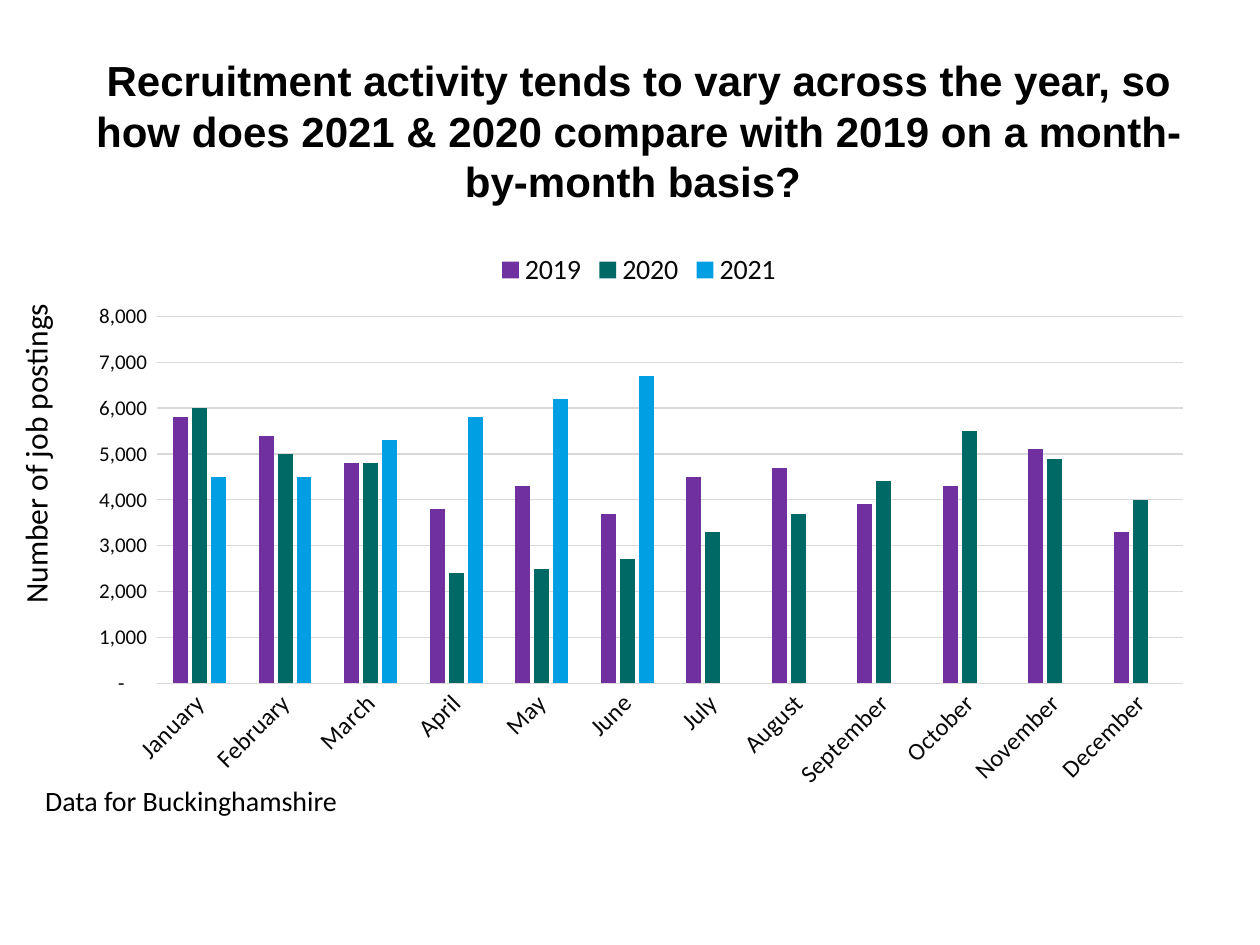
from pptx import Presentation
from pptx.chart.data import CategoryChartData
from pptx.dml.color import RGBColor
from pptx.enum.chart import XL_CHART_TYPE, XL_LEGEND_POSITION, XL_TICK_MARK
from pptx.enum.text import MSO_ANCHOR, MSO_AUTO_SIZE, PP_ALIGN
from pptx.util import Inches, Pt


def color(hex_string):
    return RGBColor.from_string(hex_string)


def write(target, text=None, size=16, name="Calibri", ink="000000", bold=False, align=None):
    """Format a chart part's font, or fill a shape with text and format it."""
    if text is None:
        font = target.font
    else:
        paragraph = target.text_frame.paragraphs[0]
        paragraph.alignment = align
        run = paragraph.add_run()
        run.text = text
        font = run.font
    font.size = Pt(size)
    font.name = name
    font.bold = bold
    font.color.rgb = color(ink)


presentation = Presentation()
presentation.slide_width = Inches(10)
presentation.slide_height = Inches(7.5)
slide = presentation.slides.add_slide(presentation.slide_layouts[5])

# Title
title = slide.shapes.title
title.left, title.top = Inches(0.57), Inches(0.41)
title.width, title.height = Inches(9), Inches(1.25)
title.text_frame.vertical_anchor = MSO_ANCHOR.MIDDLE
title.text_frame.auto_size = MSO_AUTO_SIZE.NONE
write(title, "Recruitment activity tends to vary across the year, so how does 2021 & 2020 "
      "compare with 2019 on a month-by-month basis? ",
      size=24, name="Arial", bold=True, align=PP_ALIGN.CENTER)

# Monthly job postings
postings = {
    "2019": ("7030A0", [5800, 5400, 4800, 3800, 4300, 3700, 4500, 4700, 3900, 4300, 5100, 3300]),
    "2020": ("006965", [6000, 5000, 4800, 2400, 2500, 2700, 3300, 3700, 4400, 5500, 4900, 4000]),
    "2021": ("009FE3", [4500, 4500, 5300, 5800, 6200, 6700] + [None] * 6),
}
chart_data = CategoryChartData()
chart_data.categories = ["January", "February", "March", "April", "May", "June", "July",
                         "August", "September", "October", "November", "December"]
for year, (_, values) in postings.items():
    chart_data.add_series(year, values)
chart = slide.shapes.add_chart(XL_CHART_TYPE.COLUMN_CLUSTERED, Inches(0.57), Inches(1.89),
                               Inches(9), Inches(4.46), chart_data).chart
write(chart, size=10)
chart.has_title = False
chart.has_legend = True
chart.legend.position = XL_LEGEND_POSITION.TOP
chart.legend.include_in_layout = False
write(chart.legend, size=16, ink="080808")

plot = chart.plots[0]
plot.gap_width = 219
plot.overlap = -27
plot.vary_by_categories = False
for series, (fill, _) in zip(plot.series, postings.values()):
    series.format.fill.solid()
    series.format.fill.fore_color.rgb = color(fill)
    series.invert_if_negative = False

month_axis, postings_axis = chart.category_axis, chart.value_axis
for axis, size in ((month_axis, 14), (postings_axis, 12)):
    axis.major_tick_mark = XL_TICK_MARK.NONE
    axis.minor_tick_mark = XL_TICK_MARK.NONE
    write(axis.tick_labels, size=size, ink="080808")
# Slanted month names
month_axis._element.txPr.bodyPr.set("rot", "-2700000")

postings_axis.minimum_scale = 0
postings_axis.maximum_scale = 8000
postings_axis.major_unit = 1000
postings_axis.tick_labels.number_format = '_-* #,##0_-;\\-* #,##0_-;_-* "-"??_-;_-@_'
postings_axis.tick_labels.number_format_is_linked = False
postings_axis.format.line.fill.background()
for line in (month_axis.format.line, postings_axis.major_gridlines.format.line):
    line.color.rgb = color("D9D9D9")
    line.width = Pt(0.75)

# Source note and axis caption
note = slide.shapes.add_textbox(Inches(0.26), Inches(6.17), Inches(3.78), Inches(0.37))
write(note, "Data for Buckinghamshire", size=16)
caption = slide.shapes.add_textbox(Inches(0.08), Inches(2.08), Inches(0.5), Inches(2.81))
write(caption, "Number of job postings", size=18)
caption.text_frame._txBody.bodyPr.set("vert", "vert270")
for box in (note, caption):
    box.text_frame.word_wrap = True
    box.text_frame.auto_size = MSO_AUTO_SIZE.SHAPE_TO_FIT_TEXT

presentation.save("out.pptx")
